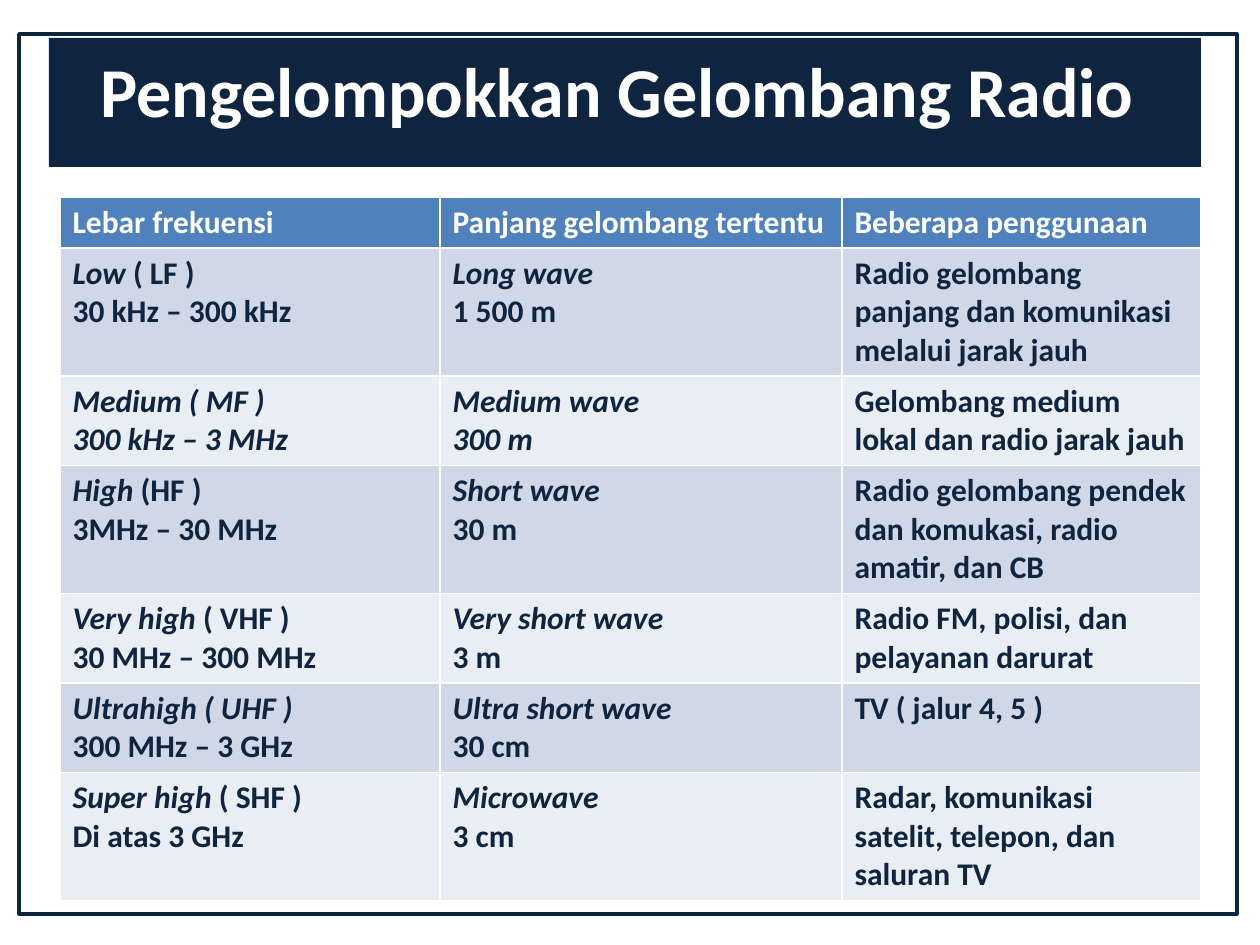
from pptx import Presentation
from pptx.dml.color import RGBColor
from pptx.enum.shapes import MSO_SHAPE as Shape
from pptx.enum.text import MSO_ANCHOR as Anchor, PP_ALIGN as Align
from pptx.util import Pt

PX = 914400 // 126
NAVY = RGBColor(0x0F, 0x24, 0x3E)
WHITE = RGBColor(0xFF, 0xFF, 0xFF)
BLUE = RGBColor(0x4F, 0x81, 0xBD)
BANDS = RGBColor(0xE9, 0xED, 0xF4), RGBColor(0xD0, 0xD8, 0xE8)

COLS = 380, 402, 359
ROWS = 45, 110, 77, 110, 77, 77, 77
# Text between underscores is italic.
WAVES = [
    ("Lebar frekuensi", "Panjang gelombang tertentu", "Beberapa penggunaan"),
    ("_Low _( LF )\n30 kHz – 300 kHz", "_Long wave_\n1 500 m",
     "Radio gelombang panjang dan komunikasi melalui jarak jauh"),
    ("_Medium ( MF )_\n_300 kHz – 3 MHz_", "_Medium wave_\n_300 m_",
     "Gelombang medium lokal dan radio jarak jauh"),
    ("_High_ (HF )\n3MHz – 30 MHz", "_Short wave_\n30 m",
     "Radio gelombang pendek dan komukasi, radio amatir, dan CB"),
    ("_Very high _( VHF )\n30 MHz – 300 MHz", "_Very short wave_\n3 m",
     "Radio FM, polisi, dan pelayanan darurat"),
    ("_Ultrahigh ( UHF )_\n300 MHz – 3 GHz", "_Ultra short wave_\n30 cm",
     "TV ( jalur 4, 5 )"),
    ("_Super high _( SHF )\nDi atas 3 GHz", "_Microwave_\n3 cm",
     "Radar, komunikasi satelit, telepon, dan saluran TV"),
]


def style(para, size, color):
    font = para.font
    font.name, font.size, font.bold = "Calibri", Pt(size), True
    font.color.rgb = color


def add_rect(slide, box):
    rect = slide.shapes.add_shape(Shape.RECTANGLE, *(n * PX for n in box))
    rect.shadow.inherit = False
    return rect


def add_frame(slide, box):
    rect = add_rect(slide, box)
    rect.fill.background()
    rect.line.color.rgb = NAVY
    rect.line.width = Pt(2)


def add_title(slide, box, text):
    rect = add_rect(slide, box)
    rect.fill.solid()
    rect.fill.fore_color.rgb = NAVY
    rect.line.fill.background()
    frame = rect.text_frame
    frame.word_wrap = True
    frame.vertical_anchor = Anchor.TOP
    frame.margin_top = 10 * PX
    para = frame.paragraphs[0]
    para.text = text
    para.alignment = Align.CENTER
    style(para, 40, WHITE)


def fill_cell(cell, text, back, color):
    cell.fill.solid()
    cell.fill.fore_color.rgb = back
    frame = cell.text_frame
    for i, line in enumerate(text.split("\n")):
        para = frame.add_paragraph() if i else frame.paragraphs[0]
        style(para, 18, color)
        for j, part in enumerate(line.split("_")):
            if part:
                run = para.add_run()
                run.text = part
                if j % 2:
                    run.font.italic = True


def add_waves(slide, left, top):
    size = left, top, sum(COLS), sum(ROWS)
    table = slide.shapes.add_table(len(ROWS), len(COLS), *(n * PX for n in size)).table
    for col, width in zip(table.columns, COLS):
        col.width = width * PX
    for r, (row, height) in enumerate(zip(table.rows, ROWS)):
        row.height = height * PX
        back, color = (BANDS[r % 2], NAVY) if r else (BLUE, WHITE)
        for cell, text in zip(row.cells, WAVES[r]):
            fill_cell(cell, text, back, color)


def main():
    deck = Presentation()
    deck.slide_width, deck.slide_height = 1260 * PX, 945 * PX
    slide = deck.slides.add_slide(deck.slide_layouts[6])
    add_frame(slide, (19, 34, 1218, 880))
    add_waves(slide, 60, 197)
    add_title(slide, (49, 38, 1152, 129), "Pengelompokkan Gelombang Radio ")
    deck.save("out.pptx")


if __name__ == "__main__":
    main()
